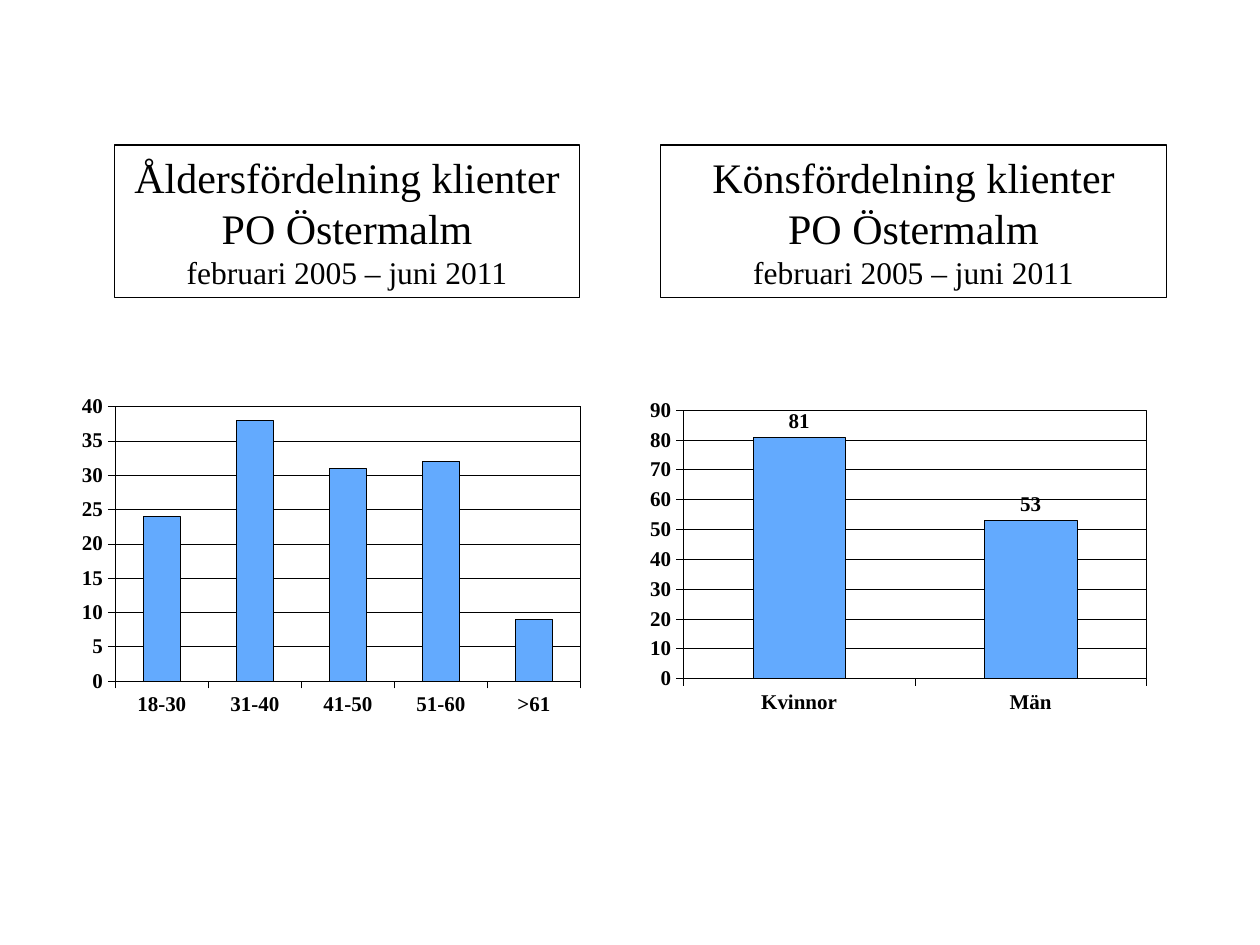
from lxml import etree
from pptx import Presentation
from pptx.chart.data import CategoryChartData
from pptx.dml.color import RGBColor
from pptx.enum.chart import XL_CHART_TYPE as CT, XL_LABEL_POSITION as LP, XL_TICK_MARK as TM
from pptx.enum.text import MSO_ANCHOR, MSO_AUTO_SIZE, PP_ALIGN
from pptx.oxml import parse_xml
from pptx.oxml.ns import nsdecls, qn
from pptx.util import Inches, Pt

COLORS = {"ink": "000000", "bar": "63AAFE"}
FONT = "Times New Roman"
INK = RGBColor.from_string(COLORS["ink"])
PERIOD = ("februari 2005 – juni 2011", 18)


def style_line(line, width):
    line.color.rgb = INK
    line.width = Pt(width)


def style_font(font, size, bold):
    font.name = FONT
    font.size = Pt(size)
    font.bold = bold
    font.color.rgb = INK


prs = Presentation()
prs.slide_width, prs.slide_height = Inches(10), Inches(7.5)
s = prs.slides.add_slide(prs.slide_layouts[5])

# Framed headings: the title on the left, a text box on the right
headings = [
    (s.shapes.title, 0.91, 3.69,
     [("Åldersfördelning klienter PO Östermalm", 24), PERIOD]),
    (s.shapes.add_textbox(0, 0, 0, 0), 5.24, 4.02,
     [("Könsfördelning klienter", 24), ("PO Östermalm", 24), PERIOD]),
]
for sp, left, width, lines in headings:
    sp.left, sp.top = Inches(left), Inches(1.15)
    sp.width, sp.height = Inches(width), Inches(1.21)
    style_line(sp.line, 0.75)
    tf = sp.text_frame
    tf.word_wrap = True
    tf.auto_size = MSO_AUTO_SIZE.NONE
    tf.vertical_anchor = MSO_ANCHOR.MIDDLE
    for i, (text, size) in enumerate(lines):
        p = tf.add_paragraph() if i else tf.paragraphs[0]
        p.alignment = PP_ALIGN.CENTER
        r = p.add_run()
        r.text = text
        style_font(r.font, size, False)

# Column charts: left, categories, values, axis maximum, step, labels, plot x/y/w/h
charts = [
    (0.65, ["18-30", "31-40", "41-50", "51-60", ">61"], [24, 38, 31, 32, 9],
     40, 5, False, (0.065, 0.08, 0.91, 0.77)),
    (5.14, ["Kvinnor", "Män"], [81, 53],
     90, 10, True, (0.07, 0.09, 0.905, 0.753)),
]
for left, cats, vals, top_value, step, labelled, plot_box in charts:
    data = CategoryChartData()
    data.categories = cats
    data.add_series("Klienter", vals)
    chart = s.shapes.add_chart(CT.COLUMN_CLUSTERED, Inches(left), Inches(3),
                               Inches(4.06), Inches(2.83), data).chart
    chart.has_legend = False
    chart.has_title = False
    style_font(chart.font, 12, True)

    # Axes and gridlines
    for axis in (chart.category_axis, chart.value_axis):
        axis.major_tick_mark = TM.OUTSIDE
        axis.minor_tick_mark = TM.NONE
        style_line(axis.format.line, 0.25)
        style_font(axis.tick_labels.font, 12, True)
    axis = chart.value_axis
    axis.minimum_scale, axis.maximum_scale, axis.major_unit = 0, top_value, step
    axis.has_major_gridlines = True
    style_line(axis.major_gridlines.format.line, 0.25)

    # Columns
    plot = chart.plots[0]
    plot.gap_width = 150
    plot.vary_by_categories = False
    fmt = plot.series[0].format
    fmt.fill.solid()
    fmt.fill.fore_color.rgb = RGBColor.from_string(COLORS["bar"])
    style_line(fmt.line, 0.25)
    if labelled:
        plot.has_data_labels = True
        labels = plot.data_labels
        labels.show_value = True
        labels.number_format = "0"
        labels.number_format_is_linked = False
        labels.position = LP.OUTSIDE_END
        style_font(labels.font, 12, True)

    # Plot area: fixed inner position and a thin frame
    area = chart._chartSpace.chart.plotArea
    for old in area.findall(qn("c:layout")):
        area.remove(old)
    layout = parse_xml(f'<c:layout {nsdecls("c")}><c:manualLayout/></c:layout>')
    settings = [("layoutTarget", "inner"), ("xMode", "edge"), ("yMode", "edge")]
    settings += zip("xywh", plot_box)
    for tag, value in settings:
        etree.SubElement(layout[0], qn(f"c:{tag}")).set("val", str(value))
    area.insert(0, layout)
    area.append(parse_xml(
        f'<c:spPr {nsdecls("c", "a")}><a:noFill/><a:ln w="{Pt(0.25)}"><a:solidFill>'
        f'<a:srgbClr val="{COLORS["ink"]}"/></a:solidFill></a:ln></c:spPr>'))

prs.save("out.pptx")
